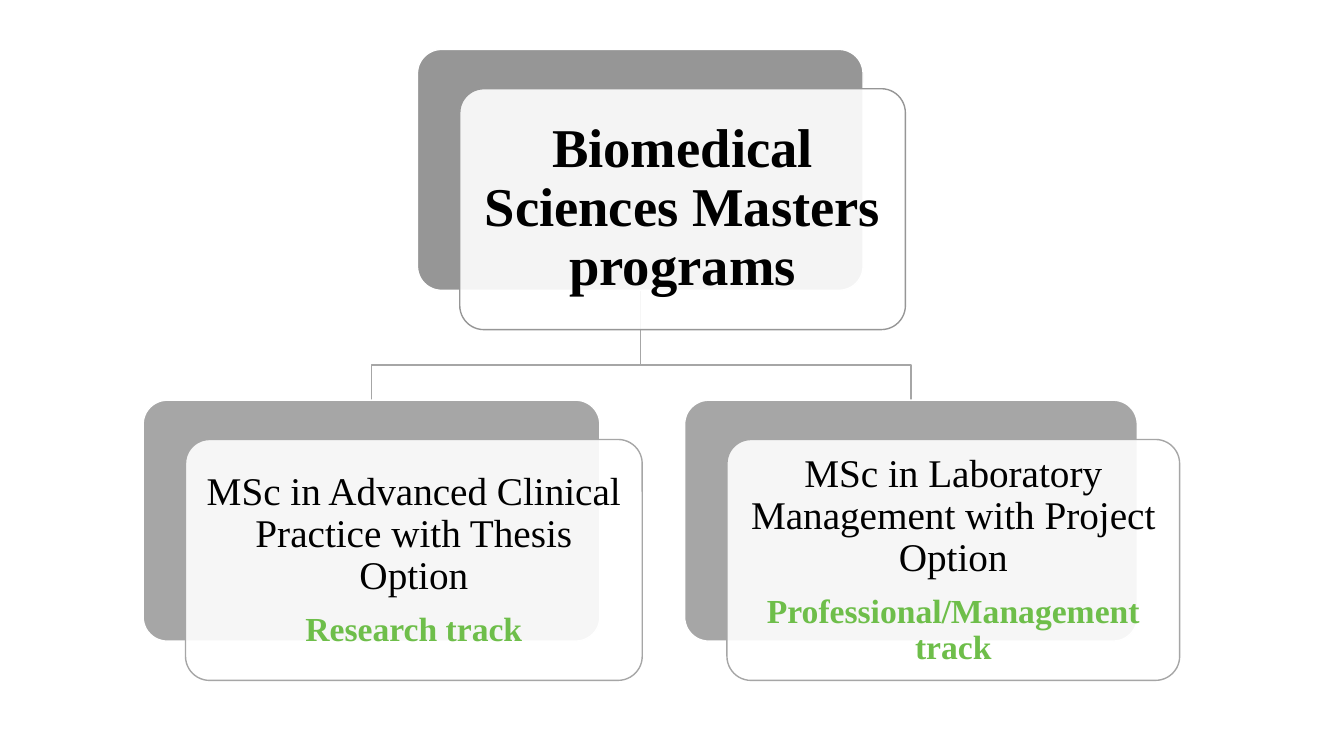
from lxml import etree
from pptx import Presentation
from pptx.dml.color import RGBColor
from pptx.enum.shapes import MSO_SHAPE
from pptx.enum.text import MSO_ANCHOR, PP_ALIGN
from pptx.oxml.ns import qn
from pptx.util import Inches, Pt

WHITE = RGBColor(0xFF, 0xFF, 0xFF)
BLACK = RGBColor(0x00, 0x00, 0x00)
DARK_GRAY = RGBColor(0x96, 0x96, 0x96)
LIGHT_GRAY = RGBColor(0xA6, 0xA6, 0xA6)
GREEN = RGBColor(0x6E, 0xBE, 0x4A)

HEADING = {"size": Pt(39), "bold": True, "color": BLACK}
PROGRAM = {"size": Pt(28), "bold": False, "color": BLACK}
TRACK = {"size": Pt(24), "bold": True, "color": GREEN}

ROOT = {
    "left": 4.14, "width": 4.42, "color": DARK_GRAY, "inset": 0.16,
    "lines": [("Biomedical Sciences Masters programs", HEADING)],
}
BRANCHES = [
    {
        "left": 6.79, "width": 4.49, "color": LIGHT_GRAY, "inset": 0.12,
        "lines": [("MSc in Laboratory Management with Project Option", PROGRAM),
                  ("Professional/Management track", TRACK)],
    },
    {
        "left": 1.42, "width": 4.53, "color": LIGHT_GRAY, "inset": 0.12,
        "lines": [("MSc in Advanced Clinical Practice with Thesis Option", PROGRAM),
                  ("Research track", TRACK)],
    },
]

SLIDE_WIDTH, SLIDE_HEIGHT = 13.33, 7.5
CARD_HEIGHT = 2.39
ROOT_TOP, BRANCH_TOP = 0.49, 3.97
FRONT_SHIFT_X, FRONT_SHIFT_Y = 0.42, 0.39
ELBOW_Y = BRANCH_TOP - 0.35


def add_panel(slide, left, top, width, fill, outline):
    shape = slide.shapes.add_shape(
        MSO_SHAPE.ROUNDED_RECTANGLE,
        Inches(left), Inches(top), Inches(width), Inches(CARD_HEIGHT))
    shape.adjustments[0] = 0.1
    shape.shadow.inherit = False
    shape.fill.solid()
    shape.fill.fore_color.rgb = fill
    shape.line.color.rgb = outline
    shape.line.width = Pt(1)
    return shape


def set_opacity(shape, percent):
    color = shape.fill._xPr.find(qn("a:solidFill"))[0]
    etree.SubElement(color, qn("a:alpha")).set("val", str(percent * 1000))


def write_lines(shape, lines, inset):
    frame = shape.text_frame
    frame.word_wrap = True
    frame.vertical_anchor = MSO_ANCHOR.MIDDLE
    for side in ("left", "top", "right", "bottom"):
        setattr(frame, f"margin_{side}", Inches(inset))
    for index, (text, style) in enumerate(lines):
        paragraph = frame.add_paragraph() if index else frame.paragraphs[0]
        paragraph.alignment = PP_ALIGN.CENTER
        paragraph.line_spacing = 0.9
        paragraph.space_after = Pt(round(style["size"].pt * 0.35))
        run = paragraph.add_run()
        run.text = text
        run.font.name = "Times New Roman"
        run.font.size = style["size"]
        run.font.bold = style["bold"]
        run.font.color.rgb = style["color"]


def add_card(slide, card, top):
    """Add a solid back panel and a shifted, translucent front panel with text."""
    add_panel(slide, card["left"], top, card["width"], card["color"], WHITE)
    front = add_panel(slide, card["left"] + FRONT_SHIFT_X, top + FRONT_SHIFT_Y,
                      card["width"], WHITE, card["color"])
    set_opacity(front, 90)
    write_lines(front, card["lines"], card["inset"])


def center_x(card):
    return card["left"] + card["width"] / 2


def add_elbow(slide, parent, child):
    """Draw the line from the bottom of the parent to the top of the child."""
    start, end = Inches(center_x(parent)), Inches(center_x(child))
    builder = slide.shapes.build_freeform(start, Inches(ROOT_TOP + CARD_HEIGHT))
    builder.add_line_segments(
        [(start, Inches(ELBOW_Y)), (end, Inches(ELBOW_Y)), (end, Inches(BRANCH_TOP))],
        close=False)
    elbow = builder.convert_to_shape()
    elbow.shadow.inherit = False
    elbow.fill.background()
    elbow.line.color.rgb = LIGHT_GRAY
    elbow.line.width = Pt(1)


def main():
    presentation = Presentation()
    presentation.slide_width = Inches(SLIDE_WIDTH)
    presentation.slide_height = Inches(SLIDE_HEIGHT)
    slide = presentation.slides.add_slide(presentation.slide_layouts[6])
    for branch in BRANCHES:
        add_elbow(slide, ROOT, branch)
    add_card(slide, ROOT, ROOT_TOP)
    for branch in reversed(BRANCHES):
        add_card(slide, branch, BRANCH_TOP)
    presentation.save("out.pptx")


if __name__ == "__main__":
    main()
